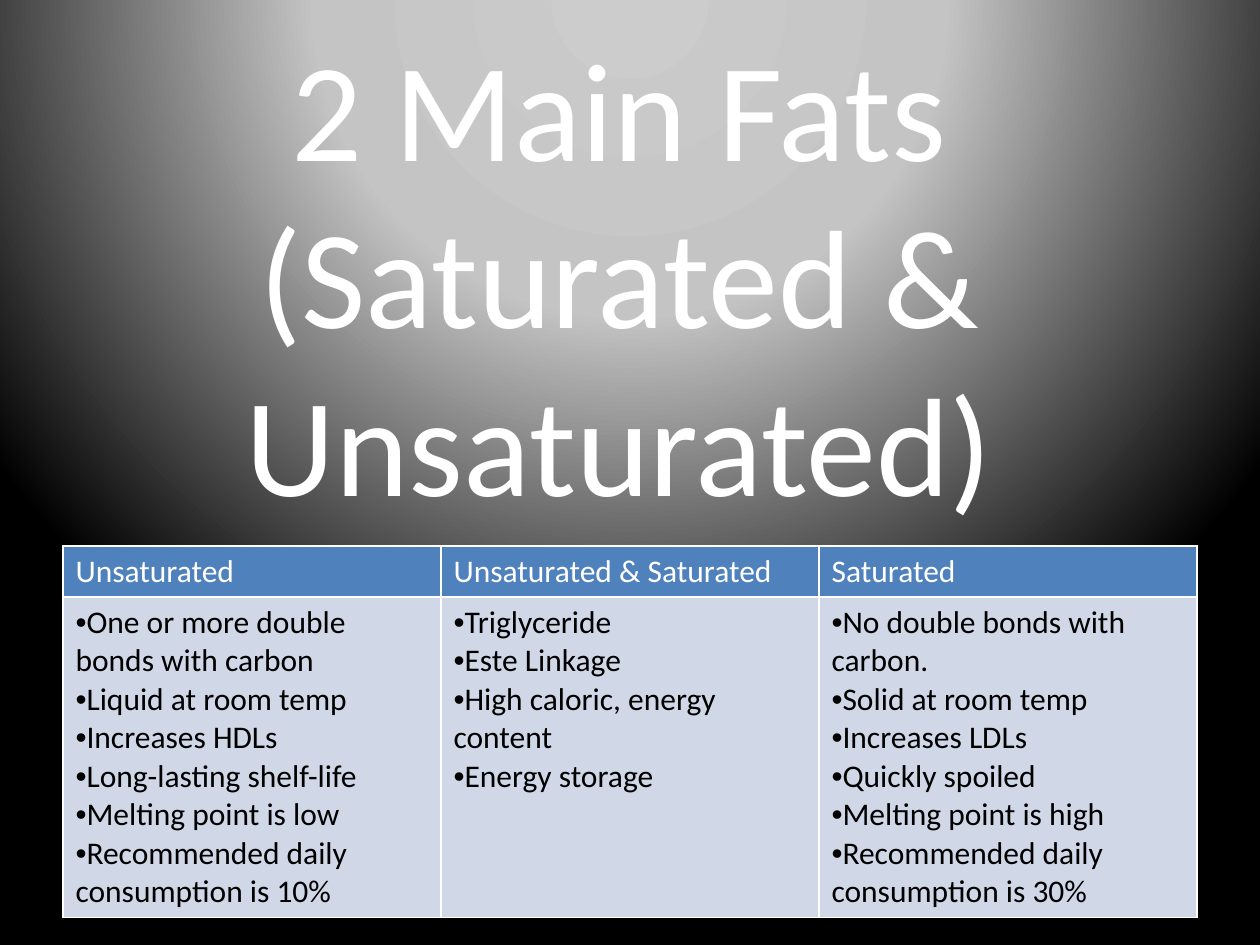
from pptx import Presentation
from pptx.dml.color import RGBColor
from pptx.enum.text import MSO_ANCHOR as Anchor, MSO_AUTO_SIZE as Fit, PP_ALIGN as Align
from pptx.oxml import parse_xml
from pptx.oxml.ns import nsdecls, qn
from pptx.util import Pt

FONT = "Calibri"
DOT_FONT = "Arial"
WHITE = RGBColor(0xFF, 0xFF, 0xFF)
BLACK = RGBColor(0, 0, 0)
BLUE = RGBColor(0x4F, 0x81, 0xBD)
PALE = RGBColor(0xD0, 0xD8, 0xE8)
GLOW = [(0, RGBColor(0xCC, 0xCC, 0xCC)), (40, RGBColor(0xC4, 0xC4, 0xC4)), (100, BLACK)]

TITLE = "2 Main Fats (Saturated & Unsaturated)"
FATS = {
    "Unsaturated": [
        "One or more double bonds with carbon",
        "Liquid at room temp",
        "Increases HDLs",
        "Long-lasting shelf-life",
        "Melting point is low",
        "Recommended daily consumption is 10%",
    ],
    "Unsaturated & Saturated": [
        "Triglyceride",
        "Este Linkage",
        "High caloric, energy content",
        "Energy storage",
    ],
    "Saturated": [
        "No double bonds with carbon.",
        "Solid at room temp",
        "Increases LDLs",
        "Quickly spoiled",
        "Melting point is high",
        "Recommended daily consumption is 30%",
    ],
}
COL = 216
ROWS = [29.2, 180]


def write(frame, lines, size=18, color=WHITE, align=Align.LEFT, bullet=False):
    for i, line in enumerate(lines):
        para = frame.add_paragraph() if i else frame.paragraphs[0]
        para.alignment = align
        run = para.add_run()
        run.text = line
        run.font.name, run.font.size = FONT, Pt(size)
        run.font.color.rgb = color
        if bullet:
            props = para._p.get_or_add_pPr()
            props.append(parse_xml(f'<a:buFont {nsdecls("a")} typeface="{DOT_FONT}"/>'))
            props.append(parse_xml(f'<a:buChar {nsdecls("a")} char="•"/>'))


def fill_cell(cell, color):
    """Set the fill, with thin white borders ahead of it as the schema asks."""
    cell.fill.solid()
    cell.fill.fore_color.rgb = color
    props = cell._tc.get_or_add_tcPr()
    for i, side in enumerate(("lnL", "lnR", "lnT", "lnB")):
        props.insert(i, parse_xml(
            f'<a:{side} {nsdecls("a")} w="{Pt(1)}"><a:solidFill>'
            f'<a:srgbClr val="{WHITE}"/></a:solidFill></a:{side}>'))


def paint_back(slide):
    """Fill the background with a round glow centred above the slide."""
    slide.background.fill.solid()
    solid = slide.element.find(".//" + qn("p:bgPr")).find(qn("a:solidFill"))
    stops = "".join(f'<a:gs pos="{pos * 1000}"><a:srgbClr val="{color}"/></a:gs>'
                    for pos, color in GLOW)
    glow = parse_xml(
        f'<a:gradFill {nsdecls("a")} rotWithShape="1"><a:gsLst>{stops}</a:gsLst>'
        '<a:path path="circle"><a:fillToRect l="50000" t="-80000" r="50000" b="180000"/>'
        '</a:path></a:gradFill>')
    solid.getparent().replace(solid, glow)


def add_title(slide):
    title = slide.shapes.title
    title.left, title.top, title.width, title.height = Pt(30), Pt(108), Pt(648), Pt(96)
    frame = title.text_frame
    frame.word_wrap, frame.auto_size = True, Fit.NONE
    frame.vertical_anchor = Anchor.MIDDLE
    write(frame, [TITLE], size=80, align=Align.CENTER)


def add_fats(slide):
    table = slide.shapes.add_table(len(ROWS), len(FATS), Pt(36), Pt(312),
                                   Pt(COL * len(FATS)), Pt(sum(ROWS))).table
    for row, height in zip(table.rows, ROWS):
        row.height = Pt(height)
    for i, (name, facts) in enumerate(FATS.items()):
        table.columns[i].width = Pt(COL)
        head, body = table.cell(0, i), table.cell(1, i)
        fill_cell(head, BLUE)
        write(head.text_frame, [name])
        fill_cell(body, PALE)
        write(body.text_frame, facts, color=BLACK, bullet=True)
    table.first_row = table.horz_banding = False


def main():
    deck = Presentation()
    deck.slide_width, deck.slide_height = Pt(720), Pt(540)
    slide = deck.slides.add_slide(deck.slide_layouts[5])
    paint_back(slide)
    add_title(slide)
    add_fats(slide)
    deck.save("out.pptx")


if __name__ == "__main__":
    main()
